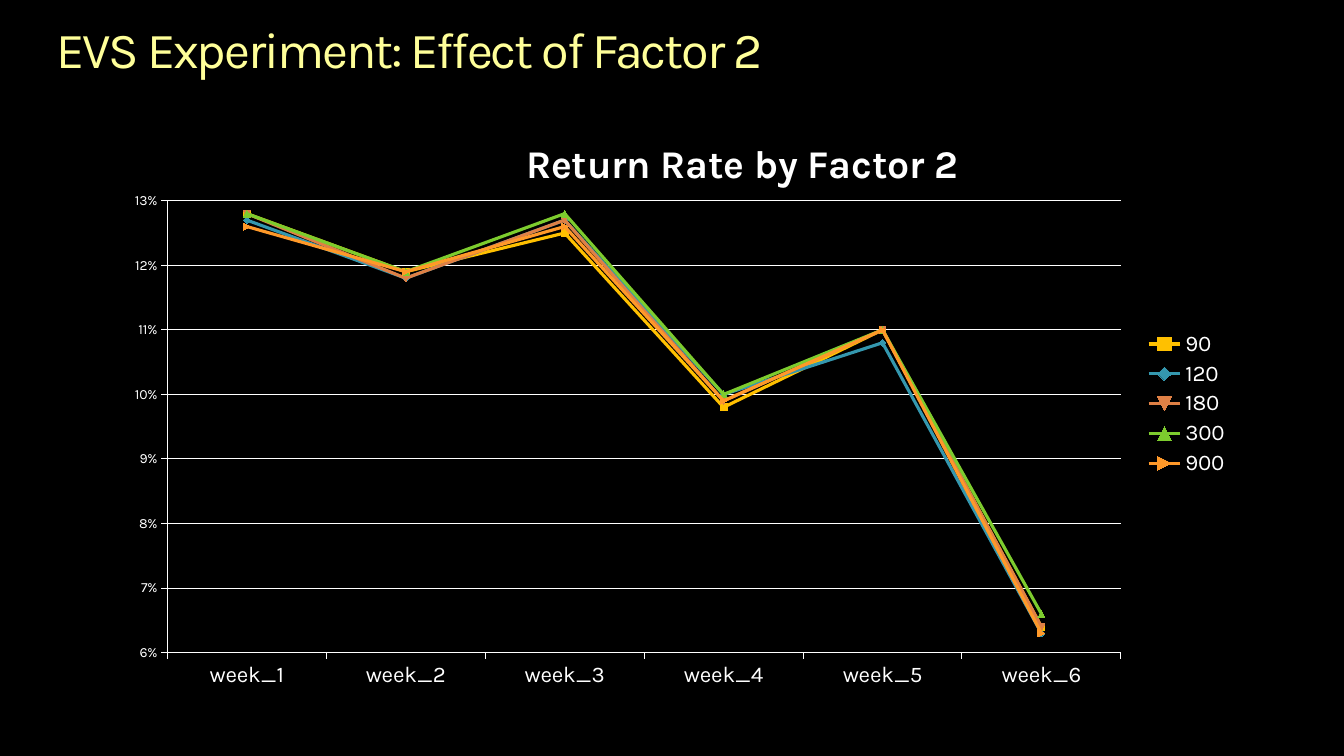
from lxml import etree
from pptx import Presentation
from pptx.chart.data import CategoryChartData
from pptx.dml.color import RGBColor
from pptx.enum.chart import XL_CHART_TYPE as ChartType
from pptx.enum.chart import XL_LEGEND_POSITION as LegendPos
from pptx.enum.chart import XL_TICK_MARK as Tick
from pptx.oxml.ns import qn
from pptx.util import Inches, Pt

BLACK = RGBColor(0x00, 0x00, 0x00)
WHITE = RGBColor(0xFF, 0xFF, 0xFF)
YELLOW = RGBColor(0xFF, 0xFF, 0x99)
GOLD = RGBColor(0xFF, 0xC0, 0x00)
TEAL = RGBColor(0x34, 0x97, 0xAE)
RUST = RGBColor(0xDF, 0x80, 0x45)
GREEN = RGBColor(0x7D, 0xCC, 0x2E)
ORANGE = RGBColor(0xFF, 0x99, 0x29)

WEEKS = [f"week_{n}" for n in range(1, 7)]
RETURN_RATES = [
    ("90", GOLD, (0.128, 0.119, 0.125, 0.098, 0.11, 0.064)),
    ("120", TEAL, (0.127, 0.118, 0.127, 0.1, 0.108, 0.063)),
    ("180", RUST, (0.128, 0.118, 0.127, 0.099, 0.11, 0.064)),
    ("300", GREEN, (0.128, 0.119, 0.128, 0.1, 0.11, 0.066)),
    ("900", ORANGE, (0.126, 0.119, 0.126, 0.099, 0.11, 0.063)),
]


def write(p, text, font, size, color, bold=False, spacing=None):
    """Add one formatted run to a paragraph."""
    r = p.add_run()
    r.text = text
    set_font(r.font, font, size, color, bold)
    if spacing is not None:
        r.font._element.set("spc", str(int(spacing * 100)))


def set_font(target, font, size, color, bold=False):
    target.name, target.size, target.bold = font, Pt(size), bold
    target.color.rgb = color


def place(part, x, y, w=None, h=None, inner=False):
    """Fix a chart part at fractions of the chart area."""
    for old in part.findall(qn("c:layout")):
        part.remove(old)
    layout = etree.Element(qn("c:layout"))
    manual = etree.SubElement(layout, qn("c:manualLayout"))
    settings = [("layoutTarget", "inner" if inner else None),
                ("xMode", "edge"), ("yMode", "edge"),
                ("x", x), ("y", y), ("w", w), ("h", h)]
    for name, value in settings:
        if value is not None:
            etree.SubElement(manual, qn(f"c:{name}")).set("val", str(value))
    # The layout follows the title text or legend position, and leads a plot area
    before = [e for e in part if e.tag in (qn("c:tx"), qn("c:legendPos"))]
    part.insert(len(before), layout)


class Deck:
    def __init__(self, font="Karla"):
        self.font = font
        self.prs = Presentation()
        self.prs.slide_width, self.prs.slide_height = Inches(13.33), Inches(7.5)
        self.s = None

    def add_slide(self, color):
        self.s = self.prs.slides.add_slide(self.prs.slide_layouts[6])
        fill = self.s.background.fill
        fill.solid()
        fill.fore_color.rgb = color

    def title(self, text, x, y, w, h):
        sp = self.s.shapes.add_textbox(Inches(x), Inches(y), Inches(w), Inches(h))
        tf = sp.text_frame
        tf.word_wrap = True
        tf.margin_left = tf.margin_right = tf.margin_top = tf.margin_bottom = 0
        p = tf.paragraphs[0]
        p.line_spacing = 0.9
        write(p, text, self.font, 36, YELLOW, spacing=-1.5)

    def line_chart(self, title, categories, series, x, y, w, h):
        data = CategoryChartData(number_format="0.0%")
        data.categories = categories
        for name, _, values in series:
            data.add_series(name, values)
        chart = self.s.shapes.add_chart(
            ChartType.LINE_MARKERS, Inches(x), Inches(y), Inches(w), Inches(h), data).chart
        set_font(chart.font, self.font, 10, WHITE)

        # Series
        plot = chart.plots[0]
        plot.vary_by_categories = False
        for line, (_, color, _) in zip(plot.series, series):
            line.smooth = False
            line.format.line.color.rgb = color
            line.format.line.width = Pt(2.25)
            line.marker.size = 5
            line.marker.format.fill.solid()
            line.marker.format.fill.fore_color.rgb = color
            line.marker.format.line.color.rgb = color

        # Axes
        weeks, rates = chart.category_axis, chart.value_axis
        rates.minimum_scale, rates.maximum_scale, rates.major_unit = 0.06, 0.13, 0.01
        rates.tick_labels.number_format = "0%"
        rates.tick_labels.number_format_is_linked = False
        rates.has_major_gridlines = True
        lines = [rates.major_gridlines.format.line]
        for axis, size in ((weeks, 16), (rates, 10)):
            axis.major_tick_mark = Tick.OUTSIDE
            set_font(axis.tick_labels.font, self.font, size, WHITE)
            lines.append(axis.format.line)
        for ln in lines:
            ln.color.rgb = WHITE
            ln.width = Pt(0.75)

        # Title and legend
        chart.has_title = True
        write(chart.chart_title.text_frame.paragraphs[0], title,
              self.font, 28, WHITE, bold=True)
        chart.chart_title.include_in_layout = False
        chart.has_legend = True
        chart.legend.position = LegendPos.RIGHT
        chart.legend.include_in_layout = False
        set_font(chart.legend.font, self.font, 16, WHITE)

        # Layout
        place(chart._chartSpace.chart.plotArea, 0.049, 0.157, 0.843, 0.764, inner=True)
        place(chart.chart_title._element, 0.36, 0.04)
        place(chart.legend._element, 0.91, 0.37, 0.08, 0.26)


def main():
    deck = Deck()
    deck.add_slide(BLACK)
    deck.title("EVS Experiment: Effect of Factor 2", 0.56, 0.25, 12.21, 0.55)
    deck.line_chart("Return Rate by Factor 2", WEEKS, RETURN_RATES,
                    1.11, 1.07, 11.22, 5.87)
    deck.prs.save("out.pptx")


if __name__ == "__main__":
    main()
